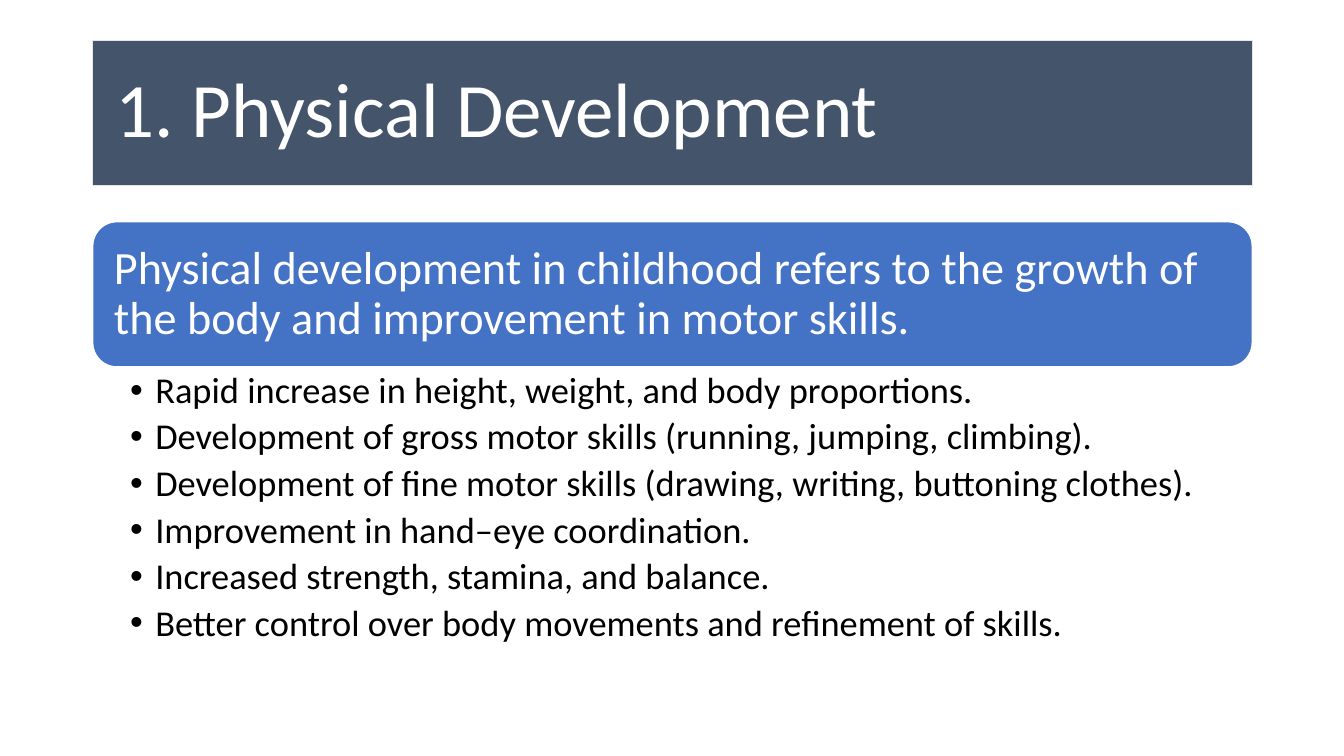
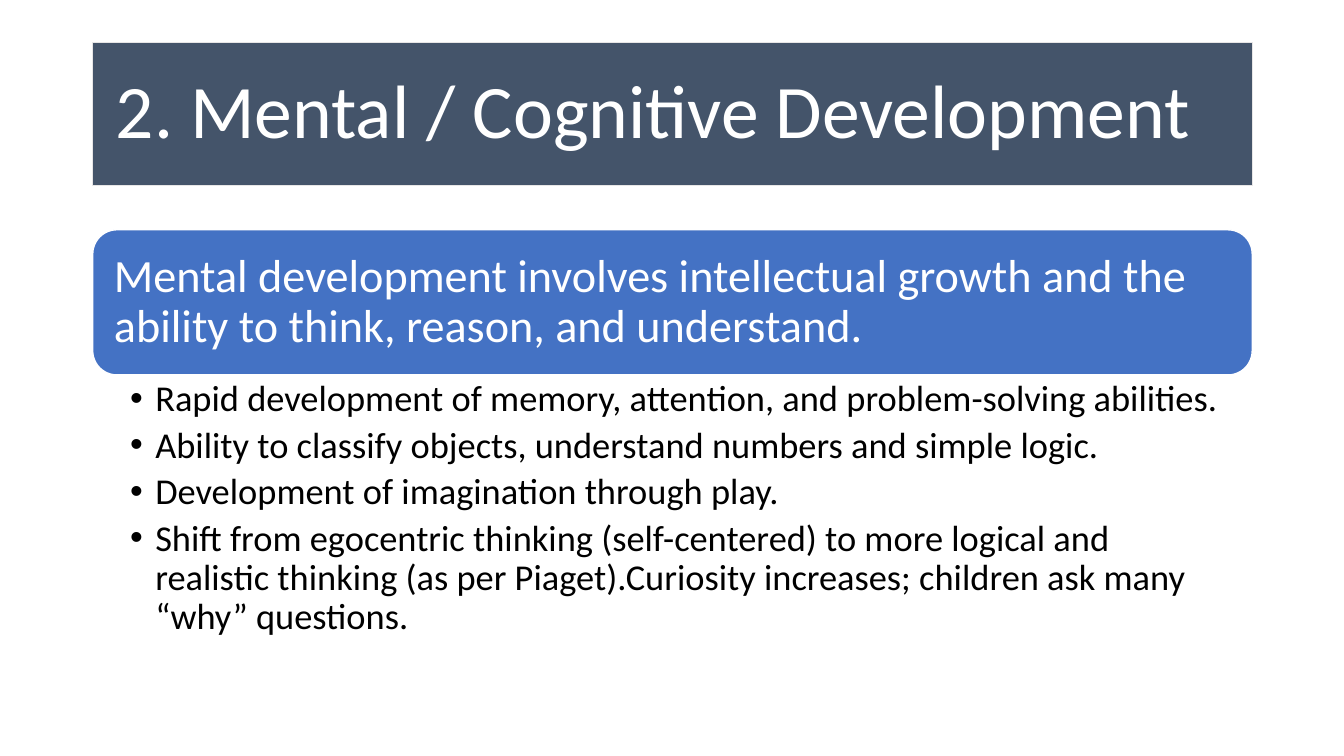
from dataclasses import dataclass

from lxml import etree
from pptx import Presentation
from pptx.dml.color import RGBColor
from pptx.enum.shapes import MSO_SHAPE
from pptx.enum.text import MSO_ANCHOR, MSO_AUTO_SIZE, PP_ALIGN
from pptx.oxml.ns import qn
from pptx.presentation import Presentation as Deck
from pptx.shapes.base import BaseShape
from pptx.util import Inches, Pt


@dataclass(frozen=True)
class Theme:
    font: str = "Calibri"
    title_fill: str = "44546A"
    title_line: str = "E7E6E6"
    statement_fill: str = "4472C4"
    light: str = "FFFFFF"
    dark: str = "000000"
    statement_size: int = 33
    bullet_size: int = 26
    line_spacing: float = 0.9
    bullet_gap: float = 0.2


@dataclass(frozen=True)
class Insets:
    left: float
    top: float
    right: float
    bottom: float


@dataclass(frozen=True)
class Topic:
    title: str
    title_size: int
    title_top: float
    title_height: float
    statement: str
    statement_top: float
    bullets: tuple[str, ...]
    bullets_height: float


THEME = Theme()
LEFT, WIDTH = 0.92, 11.5
STATEMENT_HEIGHT = 1.44
BULLET_INDENT = 0.25
TITLE_INSETS = Insets(0.23, 0.23, 0.23, 0.23)
STATEMENT_INSETS = Insets(0.14, 0.14, 0.14, 0.14)
BULLET_INSETS = Insets(0.37, 0.05, 0.26, 0.05)

TOPICS = (
    Topic(
        title="1. Physical Development",
        title_size=55,
        title_top=0.4,
        title_height=1.44,
        statement="Physical development in childhood refers to the growth of "
        "the body and improvement in motor skills.",
        statement_top=2.2,
        bullets=(
            "Rapid increase in height, weight, and body proportions.",
            "Development of gross motor skills (running, jumping, climbing).",
            "Development of fine motor skills (drawing, writing, buttoning clothes).",
            "Improvement in hand–eye coordination.",
            "Increased strength, stamina, and balance.",
            "Better control over body movements and refinement of skills.",
        ),
        bullets_height=2.91,
    ),
    Topic(
        title="2. Mental / Cognitive Development",
        title_size=54,
        title_top=0.42,
        title_height=1.42,
        statement="Mental development involves intellectual growth and the "
        "ability to think, reason, and understand.",
        statement_top=2.28,
        bullets=(
            "Rapid development of memory, attention, and problem-solving abilities.",
            "Ability to classify objects, understand numbers and simple logic.",
            "Development of imagination through play.",
            "Shift from egocentric thinking (self-centered) to more logical and "
            "realistic thinking (as per Piaget).Curiosity increases; children ask "
            "many “why” questions.",
        ),
        bullets_height=2.76,
    ),
)


def set_attributes(target: object, values: dict[str, object]) -> None:
    for name, value in values.items():
        setattr(target, name, value)


def place(shape: BaseShape, top: float, height: float) -> None:
    set_attributes(shape, {
        "left": Inches(LEFT),
        "top": Inches(top),
        "width": Inches(WIDTH),
        "height": Inches(height),
    })


def round_corners(shape: BaseShape) -> None:
    """Give a placeholder that already has a position a rounded outline."""
    geometry = etree.Element(qn("a:prstGeom"), prst="roundRect")
    etree.SubElement(geometry, qn("a:avLst"))
    shape.element.spPr.insert(1, geometry)


def paint(shape: BaseShape, fill: str, line: str) -> None:
    shape.fill.solid()
    shape.fill.fore_color.rgb = RGBColor.from_string(fill)
    shape.line.color.rgb = RGBColor.from_string(line)
    shape.line.width = Pt(1)
    shape.shadow.inherit = False


def write(shape: BaseShape, lines: tuple[str, ...], size: int, color: str,
          insets: Insets, anchor: MSO_ANCHOR, gap: float = 0) -> None:
    """Fill a shape with one paragraph per line; gap is a share of the size."""
    frame = shape.text_frame
    frame.text = "\n".join(lines)
    set_attributes(frame, {
        "word_wrap": True,
        "auto_size": MSO_AUTO_SIZE.NONE,
        "vertical_anchor": anchor,
        "margin_left": Inches(insets.left),
        "margin_top": Inches(insets.top),
        "margin_right": Inches(insets.right),
        "margin_bottom": Inches(insets.bottom),
    })
    for paragraph in frame.paragraphs:
        set_attributes(paragraph, {
            "alignment": PP_ALIGN.LEFT,
            "line_spacing": THEME.line_spacing,
            "space_before": Pt(0),
            "space_after": Pt(size * gap),
        })
        for run in paragraph.runs:
            set_attributes(run.font, {"name": THEME.font, "size": Pt(size)})
            run.font.color.rgb = RGBColor.from_string(color)


def add_bullets(shape: BaseShape) -> None:
    for paragraph in shape.text_frame.paragraphs:
        properties = paragraph._p.get_or_add_pPr()
        properties.set("marL", str(Inches(BULLET_INDENT)))
        properties.set("indent", str(-Inches(BULLET_INDENT)))
        etree.SubElement(properties, qn("a:buFont"), typeface="Arial")
        etree.SubElement(properties, qn("a:buChar"), char="•")


def add_topic(presentation: Deck, topic: Topic) -> None:
    slide = presentation.slides.add_slide(presentation.slide_layouts[1])

    title = slide.shapes.title
    place(title, topic.title_top, topic.title_height)
    round_corners(title)
    paint(title, THEME.title_fill, THEME.title_line)
    write(title, (topic.title,), topic.title_size, THEME.light,
          TITLE_INSETS, MSO_ANCHOR.MIDDLE)

    statement = slide.shapes.add_shape(
        MSO_SHAPE.ROUNDED_RECTANGLE, Inches(LEFT), Inches(topic.statement_top),
        Inches(WIDTH), Inches(STATEMENT_HEIGHT))
    paint(statement, THEME.statement_fill, THEME.light)
    write(statement, (topic.statement,), THEME.statement_size, THEME.light,
          STATEMENT_INSETS, MSO_ANCHOR.MIDDLE)

    body = slide.placeholders[1]
    place(body, topic.statement_top + STATEMENT_HEIGHT, topic.bullets_height)
    write(body, topic.bullets, THEME.bullet_size, THEME.dark,
          BULLET_INSETS, MSO_ANCHOR.TOP, THEME.bullet_gap)
    add_bullets(body)


def main() -> None:
    presentation = Presentation()
    presentation.slide_width = Inches(13.33)
    presentation.slide_height = Inches(7.5)
    for topic in TOPICS:
        add_topic(presentation, topic)
    presentation.save("out.pptx")


if __name__ == "__main__":
    main()
